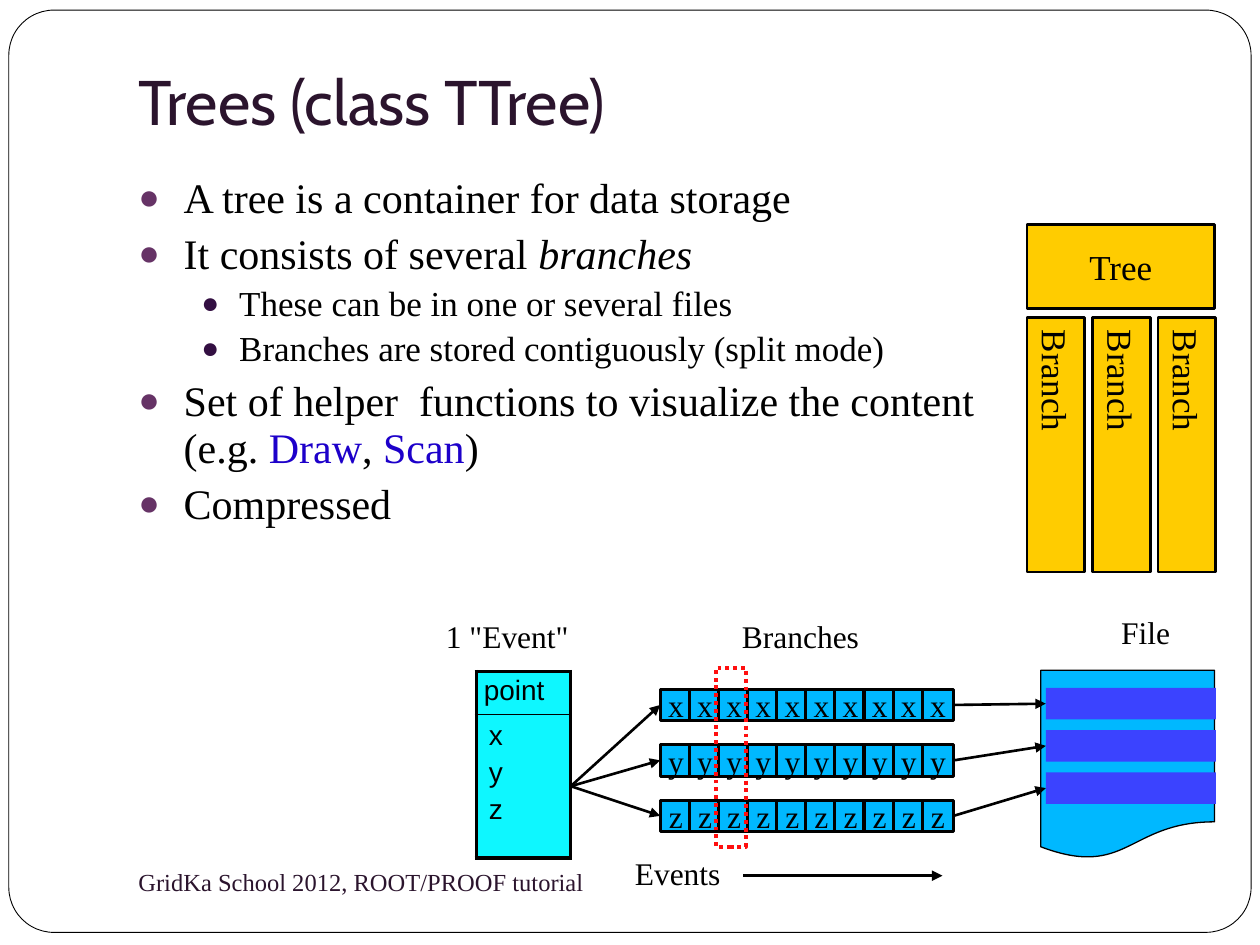
from dataclasses import dataclass

from lxml import etree
from pptx import Presentation
from pptx import util as u
from pptx.dml.color import RGBColor
from pptx.enum import dml, shapes, text
from pptx.oxml import ns

LEFT, RIGHT = 1, 3  # connection sites of a rectangle
NO_WRAP = {"wrap": False}


@dataclass(frozen=True)
class Theme:
    serif: str = "Times New Roman"
    sans: str = "Arial"
    heading: str = "Cabin"
    black: str = "000000"
    white: str = "FFFFFF"
    plum: str = "2B142D"
    bullets: tuple = ("663366", "330F42")
    code: str = "1D00CA"
    gold: str = "FFCC00"
    cyan: str = "0EF7FF"
    blue: str = "00B8FF"
    indigo: str = "3B43FF"
    red: str = "FF0F0F"
    title: float = 36
    body: tuple = (24, 20)
    space: tuple = (5.8, 3.7)
    label: float = 18
    event: float = 16
    footer: float = 14


T = Theme()


def sub(parent, tag, **attrs):
    return etree.SubElement(parent, ns.qn(tag), attrs)


def write(p, content, size=T.label, font=T.serif, color=T.black, italic=False, align=None):
    r = p.add_run()
    r.text = content
    r.font.size, r.font.name = u.Pt(size), font
    r.font.italic = italic
    r.font.color.rgb = RGBColor.from_string(color)
    if align is not None:
        p.alignment = align


def add_bullet(p, color, left, hanging):
    pPr = p._p.get_or_add_pPr()
    pPr.set("marL", str(u.Inches(left)))
    pPr.set("indent", str(-u.Inches(hanging)))
    sub(sub(pPr, "a:buClr"), "a:srgbClr", val=color)
    sub(pPr, "a:buSzPct", val="85000")
    sub(pPr, "a:buFont", typeface=T.serif)
    sub(pPr, "a:buChar", char="●")


class SlideBuilder:
    def __init__(self, slide, theme):
        self.s, self.t = slide, theme

    def group(self):
        return self.s.shapes.add_group_shape().shapes

    def shape(self, box, fill=None, line=None, width=1.5,
              kind=shapes.MSO_SHAPE.RECTANGLE, parent=None):
        sp = (parent or self.s.shapes).add_shape(kind, *map(u.Inches, box))
        sp.shadow.inherit = False
        for part, color in ((sp.fill, fill), (sp.line.fill, line)):
            if color:
                part.solid()
                part.fore_color.rgb = RGBColor.from_string(color)
            else:
                part.background()
        if line:
            sp.line.width = u.Pt(width)
        return sp

    def labelled(self, box, label, vertical=False, size=T.label, **look):
        sp = self.shape(box, line=self.t.black, **look)
        tf = sp.text_frame
        tf.word_wrap = False
        tf.vertical_anchor = text.MSO_ANCHOR.MIDDLE
        if vertical:
            tf._txBody.bodyPr.set("vert", "eaVert")
        write(tf.paragraphs[0], label, size=size, align=text.PP_ALIGN.CENTER)
        return sp

    def textbox(self, box, content="", wrap=True, anchor=text.MSO_ANCHOR.TOP,
                bottom=0.05, **fmt):
        tf = self.s.shapes.add_textbox(*map(u.Inches, box)).text_frame
        tf.word_wrap, tf.vertical_anchor = wrap, anchor
        tf.margin_bottom = u.Inches(bottom)
        if not wrap:
            tf.auto_size = text.MSO_AUTO_SIZE.SHAPE_TO_FIT_TEXT
        if content:
            write(tf.paragraphs[0], content, **fmt)
        return tf

    def bullet_list(self, box, items):
        """Each item is a level and its runs, given as (text, format) pairs."""
        tf = self.textbox(box)
        for i, (level, runs) in enumerate(items):
            p = tf.add_paragraph() if i else tf.paragraphs[0]
            p.level = level
            p.line_spacing = 0.92
            p.space_before = u.Pt(self.t.space[level])
            left, hanging = ((0.36, 0.36), (0.8, 0.3))[level]
            add_bullet(p, self.t.bullets[level], left, hanging)
            for content, fmt in runs:
                write(p, content, **{"size": self.t.body[level], **fmt})

    def arrow(self, start, end, width=1.5, source=None, target=None):
        c = self.s.shapes.add_connector(
            shapes.MSO_CONNECTOR.STRAIGHT, *map(u.Inches, (*start, *end)))
        if source is not None:
            c.begin_connect(source, RIGHT)
        if target is not None:
            c.end_connect(target, LEFT)
        c.line.width = u.Pt(width)
        c.line.color.rgb = RGBColor.from_string(self.t.black)
        sub(c.line._get_or_add_ln(), "a:tailEnd", type="triangle")
        sub(c._element.spPr, "a:effectLst")

    def event_table(self, box, heights, rows):
        tbl = self.s.shapes.add_table(len(rows), 1, *map(u.Inches, box)).table
        tbl.first_row = tbl.horz_banding = False
        for i, (height, lines) in enumerate(zip(heights, rows)):
            tbl.rows[i].height = u.Inches(height)
            cell = tbl.cell(i, 0)
            cell.fill.solid()
            cell.fill.fore_color.rgb = RGBColor.from_string(self.t.cyan)
            if i == 0:
                cell.margin_left = cell.margin_right = u.Inches(0.06)
                cell.margin_top, cell.margin_bottom = u.Inches(0.03), u.Inches(0.01)
            for j, line in enumerate(lines):
                p = cell.text_frame.add_paragraph() if j else cell.text_frame.paragraphs[0]
                p.space_before = u.Pt(0.2 * self.t.event)
                write(p, line, size=self.t.event, font=self.t.sans)
            inner = "B" if i == 0 else "T"
            tcPr = cell._tc.get_or_add_tcPr()
            for k, side in enumerate("LRTB"):
                ln = etree.Element(ns.qn(f"a:ln{side}"),
                                   w=str(u.Pt(1 if side == inner else 2.25)))
                sub(sub(ln, "a:solidFill"), "a:srgbClr", val=self.t.black)
                tcPr.insert(k, ln)


def add_text(b):
    frame = b.shape((0.07, 0.08, 9.86, 7.32), T.white, T.black, 0.5,
                    kind=shapes.MSO_SHAPE.ROUNDED_RECTANGLE)
    frame.adjustments[0] = 0.049
    b.textbox((1, 0.3, 8.2, 0.9), "Trees (class TTree)", anchor=text.MSO_ANCHOR.BOTTOM,
              bottom=0.1, size=T.title, font=T.heading, color=T.plum)
    b.textbox((1, 6.75, 4.33, 0.5), "GridKa School 2012, ROOT/PROOF tutorial",
              anchor=text.MSO_ANCHOR.MIDDLE, size=T.footer, color=T.plum)
    code = {"color": T.code}
    b.bullet_list((1, 1.35, 6.86, 3.19), [
        (0, [("A tree is a container for data storage", {})]),
        (0, [("It consists of several ", {}), ("branches", {"italic": True})]),
        (1, [("These can be in one or several files", {})]),
        (1, [("Branches are stored contiguously (split mode)", {})]),
        (0, [("Set of helper  functions to visualize the content (e.g. ", {}),
             ("Draw", code), (", ", {}), ("Scan", code), (")", {})]),
        (0, [("Compressed", {})]),
    ])


def add_tree(b):
    tree = b.group()
    b.labelled((8.15, 1.78, 1.49, 0.67), "Tree", size=T.body[1], fill=T.gold, parent=tree)
    for i in range(3):
        b.labelled((8.15 + 0.52 * i, 2.52, 0.46, 2.02), "Branch", vertical=True,
                   size=T.body[1], fill=T.gold, parent=tree)


def add_storage(b):
    """Event split into branches, which are written to a file."""
    names = ["x", "y", "z"]
    b.event_table((3.78, 5.33, 0.75, 1.48), (0.34, 1.14), (["point"], names))
    b.shape((8.26, 5.32, 1.38, 1.5), T.blue, T.black, 0.75,
            kind=shapes.MSO_SHAPE.FLOWCHART_DOCUMENT)
    for i, name in enumerate(names):
        row, y = b.group(), 5.47 + 0.44 * i
        cells = [b.labelled((5.24 + 0.231 * j, y, 0.25, 0.25), name, fill=T.blue,
                            width=1.75, parent=row) for j in range(10)]
        band_y = 5.46 + 0.335 * i
        band = b.shape((8.3, band_y, 1.35, 0.25), T.indigo)
        b.arrow((4.53, 6.24), (5.24, y + 0.125), target=cells[0])
        b.arrow((7.57, y + 0.125), (8.3, band_y + 0.125), source=cells[-1], target=band)
    marker = b.shape((5.68, 5.3, 0.24, 1.42), line=T.red, width=2.25)
    marker.line.dash_style = dml.MSO_LINE.ROUND_DOT
    for box, label in (((3.44, 4.85, 1.32, 0.4), '1 "Event"'),
                       ((5.79, 4.85, 1.34, 0.4), "Branches"),
                       ((8.8, 4.82, 0.63, 0.4), "File"),
                       ((4.94, 6.73, 1.02, 0.4), "Events")):
        b.textbox(box, label, **NO_WRAP)
    b.arrow((5.9, 6.95), (7.48, 6.95), width=2)


def main():
    prs = Presentation()
    prs.slide_width, prs.slide_height = u.Inches(10), u.Inches(7.5)
    b = SlideBuilder(prs.slides.add_slide(prs.slide_layouts[6]), T)
    add_text(b)
    add_tree(b)
    add_storage(b)
    prs.save("out.pptx")


if __name__ == "__main__":
    main()
